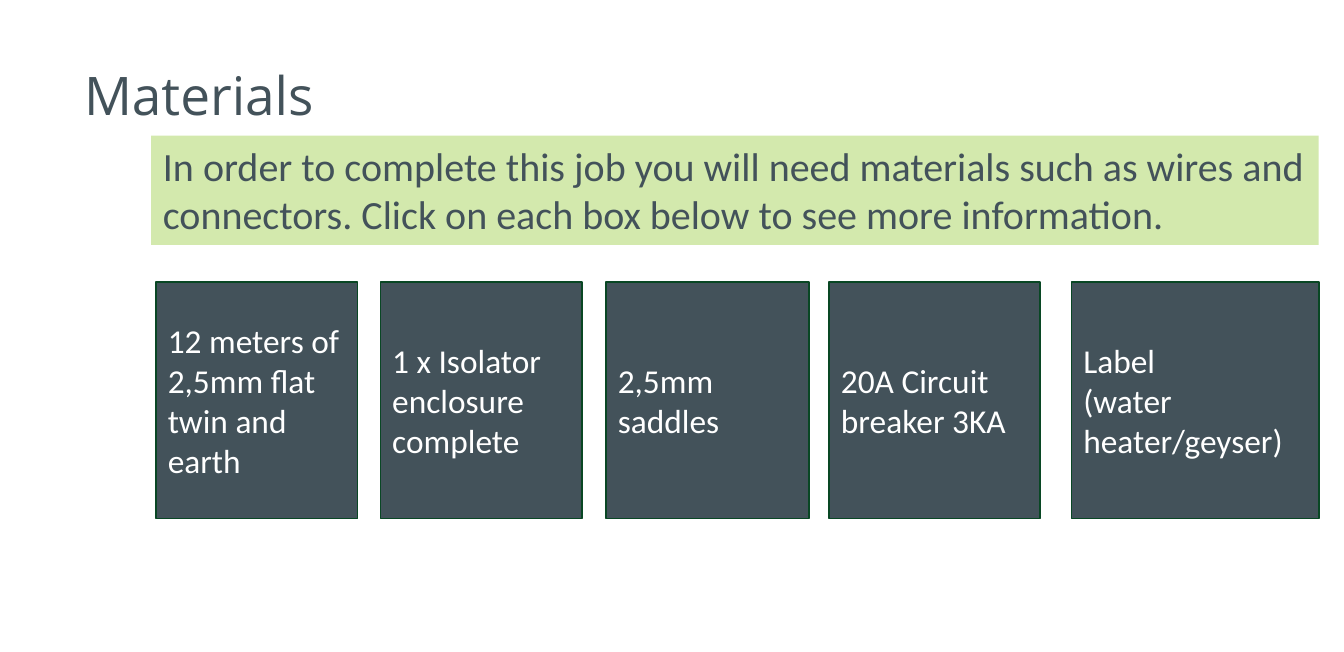
import pptx
import pptx.util
from pptx.dml.color import RGBColor
from pptx.enum.shapes import MSO_SHAPE
from pptx.enum.text import MSO_ANCHOR, MSO_AUTO_SIZE, PP_ALIGN
from pptx.util import Inches

SLATE = RGBColor(0x43, 0x52, 0x5A)
DARK_GREEN = RGBColor(0x09, 0x47, 0x24)
LIGHT_GREEN = RGBColor(0xD3, 0xE9, 0xAD)
WHITE = RGBColor(0xFF, 0xFF, 0xFF)

BOX_TOP, BOX_HEIGHT = 2.35, 1.97
# Left edge, width and text of each material; \v is a line break
MATERIALS = [
    (1.3, 1.68, "12 meters of 2,5mm flat twin and earth"),
    (3.17, 1.68, "1 x Isolator enclosure complete"),
    (5.05, 1.69, "2,5mm saddles"),
    (6.91, 1.76, "20A Circuit breaker 3KA"),
    (8.93, 2.06, "Label \v(water heater/geyser)"),
]


def format_text(shape, text, font_name, size, color, anchor):
    frame = shape.text_frame
    frame.word_wrap = True
    frame.vertical_anchor = anchor
    frame.text = text
    paragraph = frame.paragraphs[0]
    paragraph.alignment = PP_ALIGN.LEFT
    paragraph.font.name = font_name
    paragraph.font.size = pptx.util.Pt(size)
    paragraph.font.color.rgb = color


def add_box(left, top, width, height, fill_color):
    """Add a filled rectangle, measured in inches, without shadow."""
    box = slide.shapes.add_shape(
        MSO_SHAPE.RECTANGLE, Inches(left), Inches(top), Inches(width), Inches(height))
    box.shadow.inherit = False
    box.fill.solid()
    box.fill.fore_color.rgb = fill_color
    return box


presentation = pptx.Presentation()
presentation.slide_width = Inches(11.2)
presentation.slide_height = Inches(5.43)
slide = presentation.slides.add_slide(presentation.slide_layouts.get_by_name("Title Only"))

title = slide.shapes.title
title.left, title.top = Inches(0.6), Inches(0.29)
title.width, title.height = Inches(8.33), Inches(1.05)
format_text(title, "Materials", "Open Sans", 31.9, SLATE, MSO_ANCHOR.MIDDLE)
title.text_frame.auto_size = MSO_AUTO_SIZE.NONE
title.text_frame.paragraphs[0].line_spacing = 0.9

for left, width, text in MATERIALS:
    material_box = add_box(left, BOX_TOP, width, BOX_HEIGHT, SLATE)
    material_box.line.color.rgb = DARK_GREEN
    material_box.line.width = pptx.util.Pt(1)
    format_text(material_box, text, "Calibri", 20, WHITE, MSO_ANCHOR.MIDDLE)

introduction = add_box(1.26, 1.13, 9.73, 0.91, LIGHT_GREEN)
introduction.line.fill.background()
format_text(
    introduction,
    "In order to complete this job you will need materials such as wires and connectors. "
    "Click on each box below to see more information.",
    "Calibri", 24, SLATE, MSO_ANCHOR.TOP)
introduction.text_frame.auto_size = MSO_AUTO_SIZE.SHAPE_TO_FIT_TEXT

presentation.save("out.pptx")
